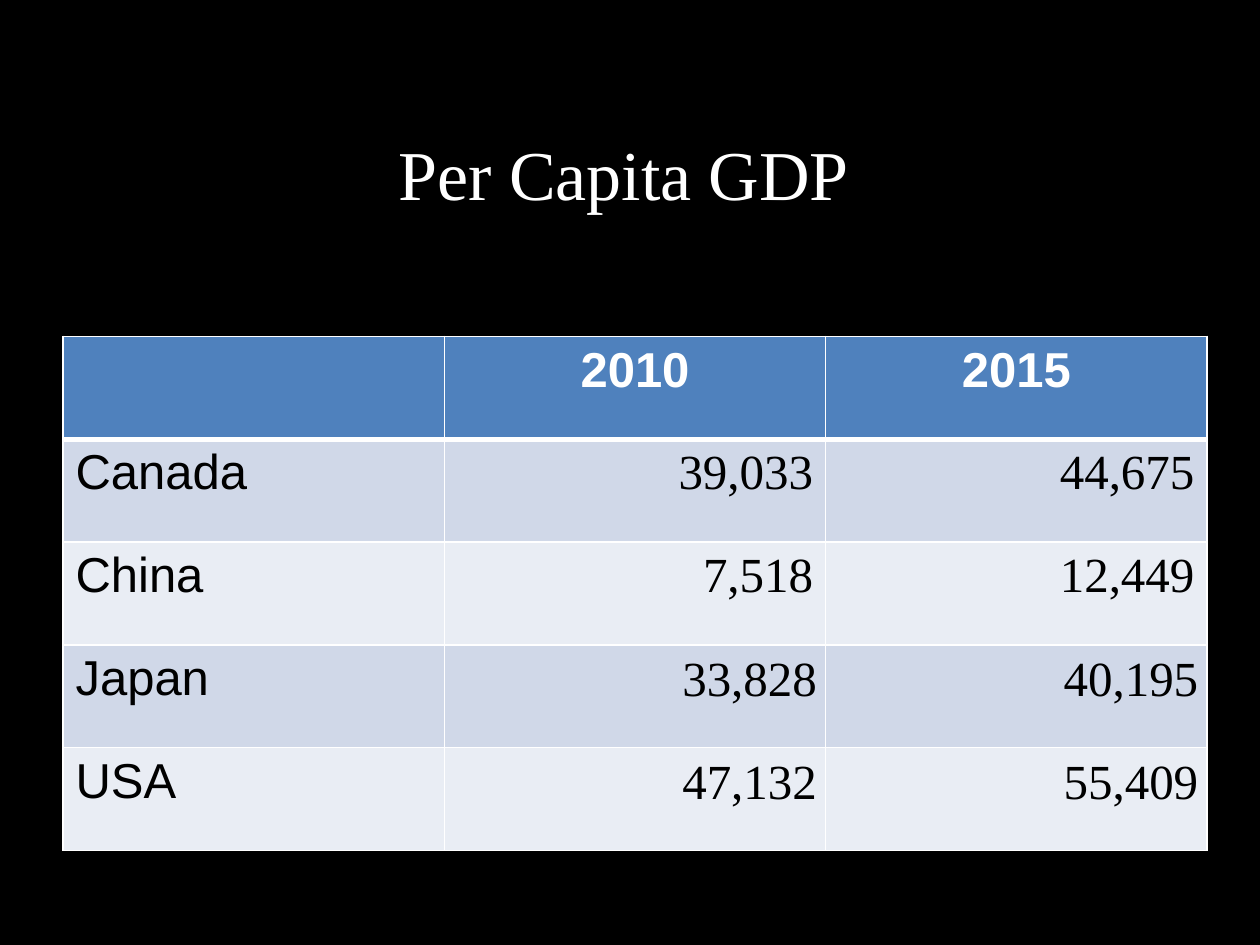
import dataclasses

import lxml.etree
import pptx
import pptx.dml.color
import pptx.enum.text
import pptx.oxml.ns
import pptx.util

Inches = pptx.util.Inches
Pt = pptx.util.Pt
Align = pptx.enum.text.PP_ALIGN
Anchor = pptx.enum.text.MSO_ANCHOR


@dataclasses.dataclass(frozen=True)
class Theme:
    """Colours, fonts and sizes of the slide."""
    back: str = "000000"
    ink: str = "000000"
    light: str = "FFFFFF"
    head: str = "4F81BD"
    bands: tuple = ("D0D8E8", "E9EDF4")
    sans: str = "Arial"
    serif: str = "Times New Roman"
    large: int = 40
    body: int = 28
    thin: int = 1
    thick: int = 3


THEME = Theme()
YEARS = ("", "2010", "2015")
ROWS = (
    ("Canada", "39,033", "44,675"),
    ("China", "7,518", "12,449"),
    ("Japan", "33,828", "40,195"),
    ("USA", "47,132", "55,409"),
)
LOOSE = ("Japan", "USA")


def color(code):
    """Turn a hex code into a colour."""
    return pptx.dml.color.RGBColor.from_string(code)


def write(frame, text, font=THEME.sans, size=THEME.body, ink=THEME.ink,
          bold=False, align=Align.LEFT, before=None, lines=None):
    """Put one formatted paragraph in a text frame."""
    para = frame.paragraphs[0]
    para.alignment = align
    para.space_before = before
    para.line_spacing = lines
    run = para.add_run()
    run.text = text
    run.font.name = font
    run.font.size = Pt(size)
    run.font.bold = bold
    run.font.color.rgb = color(ink)


def edge(cell, **widths):
    """Draw the cell borders, with widths by side in points."""
    props = cell._tc.get_or_add_tcPr()
    name = pptx.oxml.ns.qn
    for side in "LRTB":
        width = Pt(widths.get(side, THEME.thin))
        line = lxml.etree.SubElement(props, name(f"a:ln{side}"), w=str(width))
        fill = lxml.etree.SubElement(line, name("a:solidFill"))
        lxml.etree.SubElement(fill, name("a:srgbClr"), val=THEME.light)


def paint(cell, code):
    """Fill a cell with one colour."""
    cell.fill.solid()
    cell.fill.fore_color.rgb = color(code)


def add_title(slide, left, top, width, height):
    """Place and format the title in its box."""
    title = slide.shapes.title
    title.left, title.top, title.width, title.height = left, top, width, height
    frame = title.text_frame
    frame.word_wrap = True
    frame.vertical_anchor = Anchor.BOTTOM
    write(frame, "Per Capita GDP", font=THEME.serif, size=THEME.large,
          ink=THEME.light, align=Align.CENTER, before=Pt(4))


def add_grid(slide, left, top, width, height):
    """Place the table of countries and years in its box."""
    count = len(ROWS) + 1
    grid = slide.shapes.add_table(count, len(YEARS), left, top,
                                  width, height).table
    for col in grid.columns:
        col.width = width // len(YEARS)
    for row in grid.rows:
        row.height = height // count

    for col, year in enumerate(YEARS):
        cell = grid.cell(0, col)
        edge(cell, B=THEME.thick)
        paint(cell, THEME.head)
        if year:
            write(cell.text_frame, year, ink=THEME.light, bold=True,
                  align=Align.CENTER)

    for row, values in enumerate(ROWS, 1):
        for col, text in enumerate(values):
            cell = grid.cell(row, col)
            edge(cell, T=THEME.thick if row == 1 else THEME.thin)
            paint(cell, THEME.bands[(row - 1) % 2])
            if col == 0:
                write(cell.text_frame, text)
                continue
            loose = values[0] in LOOSE
            if loose:
                cell.margin_left = cell.margin_right = Inches(0.07)
                cell.margin_top = cell.margin_bottom = 0
            write(cell.text_frame, text, font=THEME.serif, align=Align.RIGHT,
                  lines=1.15 if loose else None)


def main():
    """Build and save the slide."""
    deck = pptx.Presentation()
    deck.slide_width, deck.slide_height = Inches(10), Inches(7.5)
    slide = deck.slides.add_slide(deck.slide_layouts.get_by_name("Title Only"))
    slide.background.fill.solid()
    slide.background.fill.fore_color.rgb = color(THEME.back)
    add_grid(slide, Inches(0.5), Inches(2.67), Inches(9.08), Inches(4.08))
    add_title(slide, Inches(0.75), Inches(0.58), Inches(8.4), Inches(1.17))
    deck.save("out.pptx")


if __name__ == "__main__":
    main()
